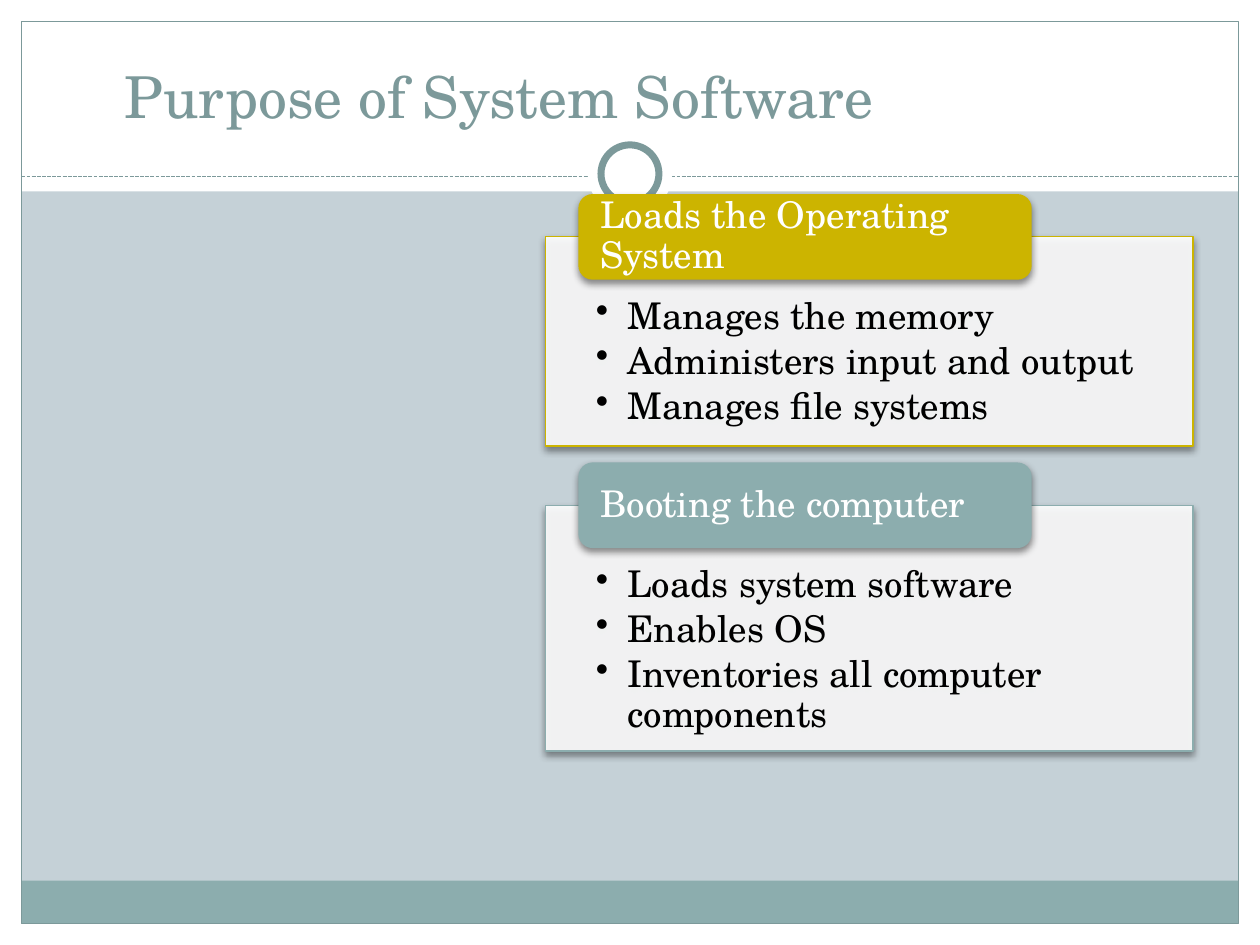
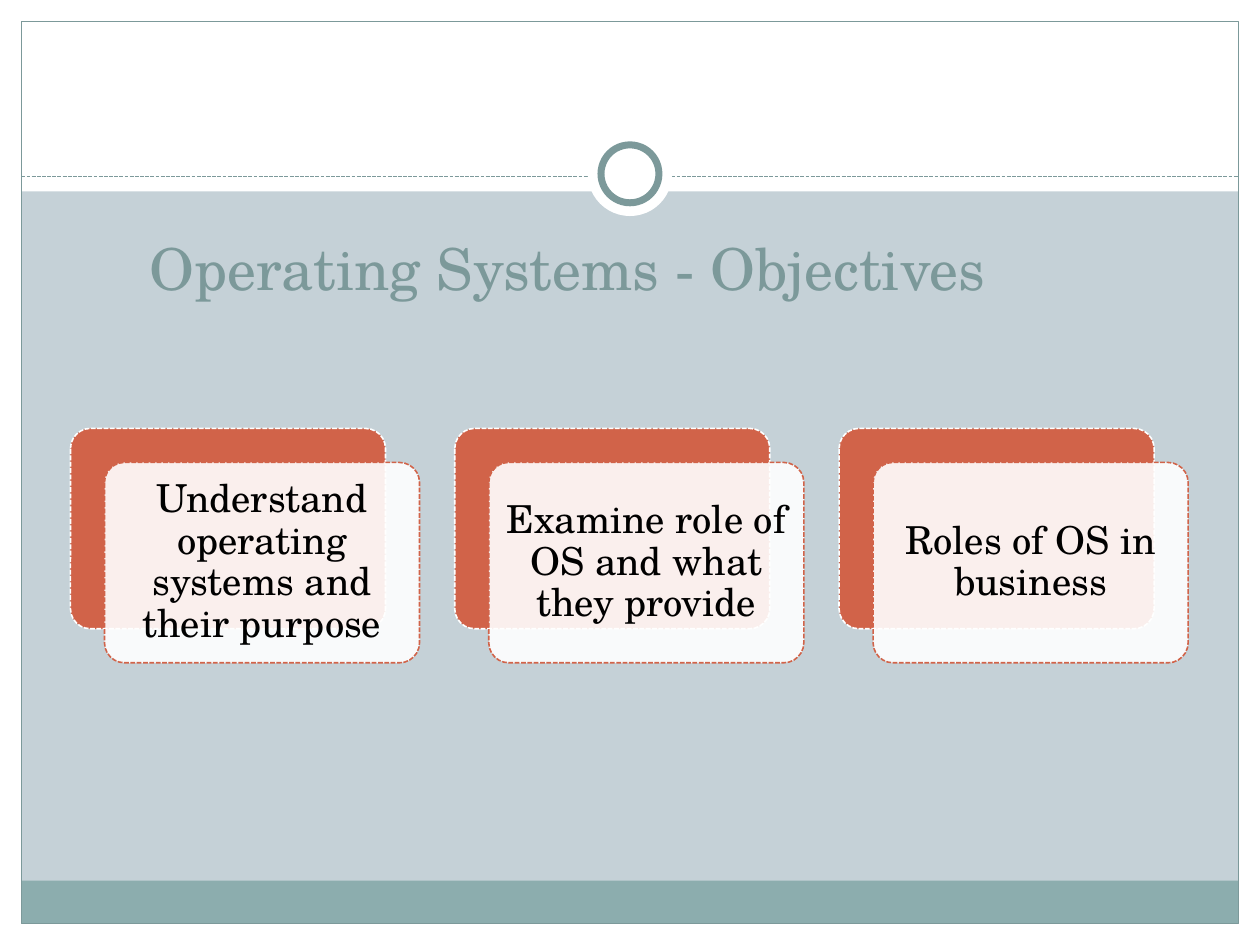
from lxml import etree
from pptx import Presentation
from pptx.dml.color import RGBColor
from pptx.enum import dml, shapes, text
from pptx.oxml import ns
from pptx.util import Inches, Pt

FONT = "TeX Gyre Schola"
WHITE = RGBColor(0xFF, 0xFF, 0xFF)
BLACK = RGBColor(0x00, 0x00, 0x00)
BACKGROUND = RGBColor(0xC5, 0xD1, 0xD7)
SLATE = RGBColor(0x7C, 0x99, 0x9A)
TEAL = RGBColor(0x8C, 0xAD, 0xAE)
GOLD = RGBColor(0xCC, 0xB4, 0x00)
RUST = RGBColor(0xD1, 0x63, 0x49)

WIDTH, HEIGHT = 10, 7.5
MARGIN = 0.17
RULE_TOP = 1.4
TITLE_LAYOUT = 5

PURPOSES = [
    ("Loads the Operating System", GOLD, 1.54, 1.66,
     ["Manages the memory", "Administers input and output", "Manages file systems"]),
    ("Booting the computer", TEAL, 3.67, 1.95,
     ["Loads system software", "Enables OS", "Inventories all computer components"]),
]
OBJECTIVES = [
    "Understand operating systems and their purpose",
    "Examine role of OS and what they provide",
    "Roles of OS in business",
]


def add_child(parent, tag, **attributes):
    child = etree.SubElement(parent, ns.qn(tag))
    for name, value in attributes.items():
        child.set(name, str(value))
    return child


def style_line(line, color, width, dashed=False):
    line.color.rgb = color
    line.width = Pt(width)
    if dashed:
        line.dash_style = dml.MSO_LINE.SQUARE_DOT


def add_box(slide, kind, left, top, width, height, fill=None, opacity=100,
            line=None, line_width=0.75, dashed=False, shadow=False):
    shape = slide.shapes.add_shape(kind, Inches(left), Inches(top), Inches(width), Inches(height))
    shape.shadow.inherit = False
    if fill is None:
        shape.fill.background()
    else:
        shape.fill.solid()
        shape.fill.fore_color.rgb = fill
    if opacity < 100:
        color = shape.element.spPr.find(".//" + ns.qn("a:srgbClr"))
        add_child(color, "a:alpha", val=opacity * 1000)
    if line is None:
        shape.line.fill.background()
    else:
        style_line(shape.line, line, line_width, dashed)
    if shadow:
        effects = shape.element.spPr.find(ns.qn("a:effectLst"))
        outer = add_child(effects, "a:outerShdw", blurRad=Pt(4), dist=Pt(2),
                          dir=90 * 60000, algn="ctr", rotWithShape=0)
        add_child(add_child(outer, "a:srgbClr", val="000000"), "a:alpha", val=45000)
    return shape


def write_text(shape, paragraphs, size, color, align=text.PP_ALIGN.LEFT,
               anchor=text.MSO_ANCHOR.MIDDLE, insets=(0.1, 0.05, 0.1, 0.05),
               line_spacing=0.9, space_after=0, bullets=False):
    frame = shape.text_frame
    frame.word_wrap = True
    frame.auto_size = text.MSO_AUTO_SIZE.NONE
    frame.vertical_anchor = anchor
    (frame.margin_left, frame.margin_top,
     frame.margin_right, frame.margin_bottom) = map(Inches, insets)
    frame.text = "\n".join(paragraphs)
    for paragraph in frame.paragraphs:
        paragraph.alignment = align
        paragraph.line_spacing = line_spacing
        paragraph.space_before = Pt(0)
        paragraph.space_after = Pt(space_after)
        paragraph.font.name = FONT
        paragraph.font.size = Pt(size)
        paragraph.font.color.rgb = color
        for run in paragraph.runs:
            run.font.name = FONT
            run.font.size = Pt(size)
            run.font.color.rgb = color
        if bullets:
            properties = paragraph._p.get_or_add_pPr()
            properties.set("marL", str(Inches(0.25)))
            properties.set("indent", str(-Inches(0.25)))
            bullet = properties.makeelement(ns.qn("a:buChar"), {"char": "•"})
            properties.find(ns.qn("a:spcAft")).addnext(bullet)


def add_rule(slide, left, right, top):
    rule = slide.shapes.add_connector(shapes.MSO_CONNECTOR.STRAIGHT, Inches(left),
                                      Inches(top), Inches(right), Inches(top))
    style_line(rule.line, SLATE, 0.75, dashed=True)
    add_child(rule.element.spPr, "a:effectLst")
    return rule


def add_ring(slide, center_x, center_y):
    def circle(size, **style):
        return add_box(slide, shapes.MSO_SHAPE.OVAL, center_x - size / 2,
                       center_y - size / 2, size, size, fill=WHITE, **style)

    return [circle(0.67), circle(0.46, line=SLATE, line_width=4)]


def build_layout(layout, slide):
    layout.background.fill.solid()
    layout.background.fill.fore_color.rgb = BACKGROUND
    rectangle = shapes.MSO_SHAPE.RECTANGLE
    inner_width = WIDTH - 2 * MARGIN
    bands = [
        (0, HEIGHT - MARGIN, WIDTH, MARGIN, WHITE),
        (0, 0, WIDTH, 1.52, WHITE),
        (0, 0, MARGIN, HEIGHT, WHITE),
        (WIDTH - MARGIN, 0, MARGIN, HEIGHT, WHITE),
        (MARGIN, 6.99, inner_width, 0.34, TEAL),
    ]
    parts = [add_box(slide, rectangle, *box, fill=fill) for *box, fill in bands]
    parts.append(add_box(slide, rectangle, MARGIN, MARGIN, inner_width,
                         HEIGHT - 2 * MARGIN, line=SLATE))
    parts.append(add_rule(slide, MARGIN, WIDTH - MARGIN, RULE_TOP))
    parts.extend(add_ring(slide, WIDTH / 2, 1.38))
    for part in parts:
        layout.shapes.element.append(part.element)


def set_title(slide, title, left, top, width, height, align):
    shape = slide.shapes.title
    shape.left, shape.top = Inches(left), Inches(top)
    shape.width, shape.height = Inches(width), Inches(height)
    write_text(shape, [title], 33, SLATE, align=align,
               anchor=text.MSO_ANCHOR.BOTTOM, line_spacing=1.0)


def add_purpose(slide, left, top, width, body_height, label, color, items):
    body = add_box(slide, shapes.MSO_SHAPE.RECTANGLE, left, top + 0.34, width, body_height,
                   fill=WHITE, opacity=90, line=color, shadow=True)
    write_text(body, items, 21, BLACK, anchor=text.MSO_ANCHOR.TOP,
               insets=(0.4, 0.48, 0.4, 0.16), space_after=3.15, bullets=True)
    tab = add_box(slide, shapes.MSO_SHAPE.ROUNDED_RECTANGLE, left + 0.26, top,
                  width * 0.7, 0.68, fill=color, shadow=True)
    write_text(tab, [label], 21, WHITE, insets=(0.14, 0, 0.14, 0))


def add_objective(slide, left, top, width, height, objective):
    def card(offset, fill, line, opacity=100):
        shape = add_box(slide, shapes.MSO_SHAPE.ROUNDED_RECTANGLE, left + offset,
                        top + offset, width, height, fill=fill, opacity=opacity,
                        line=line, line_width=0.9, dashed=True)
        shape.adjustments[0] = 0.1
        return shape

    card(0, RUST, WHITE)
    front = card(0.27, WHITE, RUST, opacity=90)
    write_text(front, [objective], 22, BLACK, align=text.PP_ALIGN.CENTER, insets=(0.09,) * 4)


def build_purpose_slide(slide):
    set_title(slide, "Purpose of System Software", 0.75, 0.25, 6.28, 0.83,
              text.PP_ALIGN.RIGHT)
    for label, color, top, body_height, items in PURPOSES:
        add_purpose(slide, 4.33, top, 5.14, body_height, label, color, items)


def build_objectives_slide(slide):
    set_title(slide, "Operating Systems - Objectives", 0.56, 1.56, 7.89, 0.89,
              text.PP_ALIGN.CENTER)
    for index, objective in enumerate(OBJECTIVES):
        add_objective(slide, 0.56 + index * 3.05, 3.4, 2.5, 1.59, objective)


def main():
    presentation = Presentation()
    presentation.slide_width = Inches(WIDTH)
    presentation.slide_height = Inches(HEIGHT)
    layout = presentation.slide_layouts[TITLE_LAYOUT]
    purpose_slide, objectives_slide = (presentation.slides.add_slide(layout) for _ in range(2))
    build_layout(layout, purpose_slide)
    build_purpose_slide(purpose_slide)
    build_objectives_slide(objectives_slide)
    presentation.save("out.pptx")


if __name__ == "__main__":
    main()
